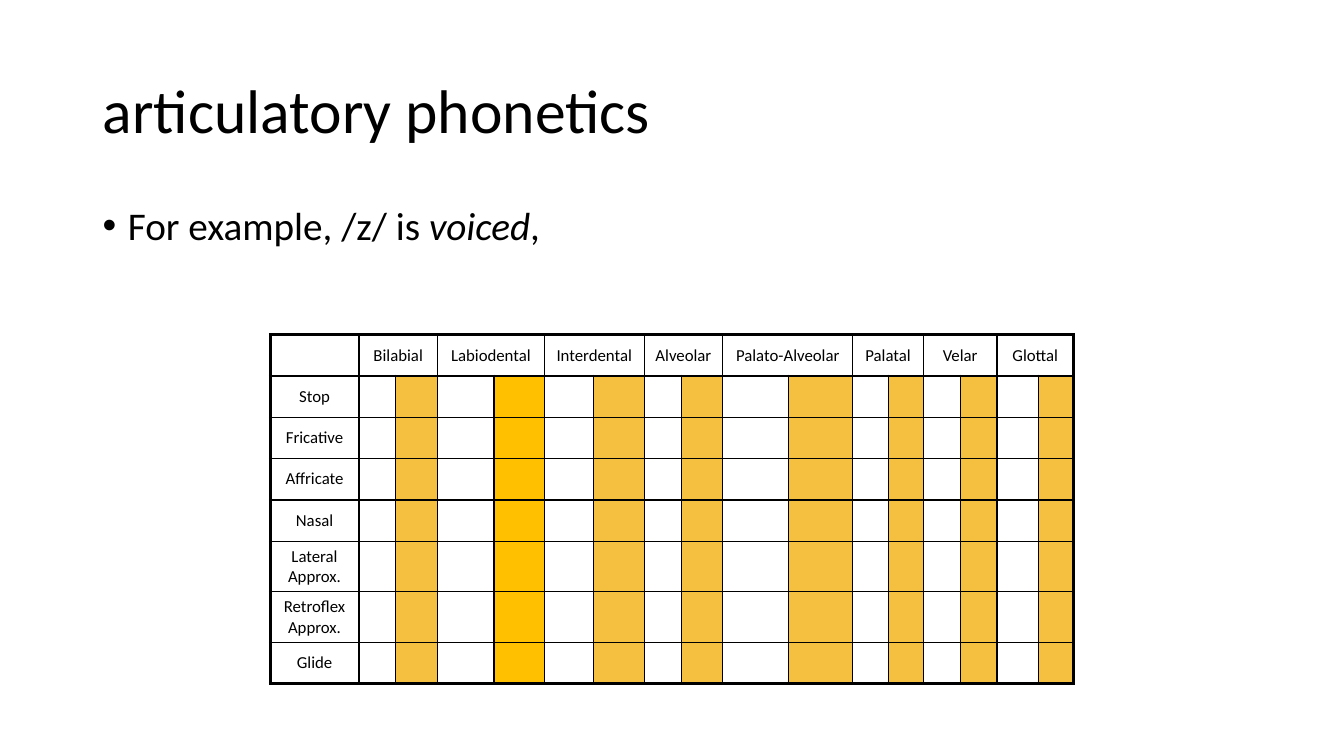
from pptx import Presentation
from pptx.dml.color import RGBColor
from pptx.enum.text import MSO_ANCHOR, PP_ALIGN
from pptx.oxml import parse_xml
from pptx.oxml.ns import nsdecls
from pptx.util import Inches, Pt

FONT = "Calibri"
BLACK, WHITE, AMBER, GOLD = "000000", "FFFFFF", "F5C040", "FFC000"
THIN, THICK = 1, 2.25
PLACES = ["Bilabial", "Labiodental", "Interdental", "Alveolar",
          "Palato-Alveolar", "Palatal", "Velar", "Glottal"]
MANNERS = ["Stop", "Fricative", "Affricate", "Nasal",
           "Lateral Approx.", "Retroflex Approx.", "Glide"]
WIDTHS = [0.88, 0.36, 0.42, 0.56, 0.5, 0.49, 0.5, 0.37, 0.41,
          0.65, 0.64, 0.35, 0.35, 0.37, 0.36, 0.41, 0.35]
ROW = 0.41


def color(code):
    return RGBColor.from_string(code)


def add_run(para, text, size, italic=False):
    run = para.add_run()
    run.text = text
    run.font.name = FONT
    run.font.size = Pt(size)
    run.font.italic = italic
    run.font.color.rgb = color(BLACK)


def add_title(slide, left, top, width, height):
    title = slide.shapes.title
    title.left, title.top = Inches(left), Inches(top)
    title.width, title.height = Inches(width), Inches(height)
    title.text_frame.vertical_anchor = MSO_ANCHOR.MIDDLE
    para = title.text_frame.paragraphs[0]
    para.alignment = PP_ALIGN.LEFT
    para.line_spacing = 0.9
    add_run(para, "articulatory phonetics", 44)


def add_body(slide, left, top, width, height):
    box = slide.shapes.add_textbox(Inches(left), Inches(top),
                                   Inches(width), Inches(height))
    box.text_frame.word_wrap = True
    para = box.text_frame.paragraphs[0]
    para.line_spacing = 0.9
    para.space_before = Pt(10)
    props = para._p.get_or_add_pPr()
    props.set("marL", str(Inches(0.25)))
    props.set("indent", str(Inches(-0.25)))
    props.append(parse_xml(f'<a:buFont {nsdecls("a")} typeface="Arial"/>'))
    props.append(parse_xml(f'<a:buChar {nsdecls("a")} char="•"/>'))
    add_run(para, "For example, /z/ is ", 28)
    add_run(para, "voiced", 28, italic=True)
    add_run(para, ",", 28)


def set_edges(cell, left, right, top, bottom):
    """Draw the four cell borders with the given widths in points."""
    props = cell._tc.get_or_add_tcPr()
    for tag, width in zip(("lnL", "lnR", "lnT", "lnB"),
                          (left, right, top, bottom)):
        props.append(parse_xml(
            f'<a:{tag} {nsdecls("a")} w="{Pt(width)}"><a:solidFill>'
            f'<a:srgbClr val="{BLACK}"/></a:solidFill></a:{tag}>'))


def set_label(cell, text):
    cell.vertical_anchor = MSO_ANCHOR.MIDDLE
    para = cell.text_frame.paragraphs[0]
    para.alignment = PP_ALIGN.CENTER
    add_run(para, text, 12)


def weight(edge, last):
    """The frame and the line after the labels are thick."""
    return THICK if edge in (0, 1, last) else THIN


def shade(row, col):
    """Each place has a white voiceless and a tinted voiced column."""
    if row == 0 or col == 0 or col % 2:
        return WHITE
    return GOLD if col == 4 else AMBER


def add_grid(slide, left, top):
    rows, cols = len(MANNERS) + 1, len(WIDTHS)
    frame = slide.shapes.add_table(rows, cols, Inches(left), Inches(top),
                                   Inches(sum(WIDTHS)), Inches(ROW * rows))
    table = frame.table
    table.first_row = table.horz_banding = False
    for col, width in zip(table.columns, WIDTHS):
        col.width = Inches(width)
    for r, row in enumerate(table.rows):
        row.height = Inches(ROW)
        for c, cell in enumerate(row.cells):
            start, end = c, c + 1
            if r == 0 and c > 0:
                start = c - (c + 1) % 2
                end = start + 2
            set_edges(cell, weight(start, cols), weight(end, cols),
                      weight(r, rows), weight(r + 1, rows))
            cell.fill.solid()
            cell.fill.fore_color.rgb = color(shade(r, c))
    for i, place in enumerate(PLACES):
        cell = table.cell(0, 2 * i + 1)
        cell.merge(table.cell(0, 2 * i + 2))
        set_label(cell, place)
    for r, manner in enumerate(MANNERS, 1):
        set_label(table.cell(r, 0), manner)


def main():
    deck = Presentation()
    deck.slide_width, deck.slide_height = Inches(13.33), Inches(7.5)
    slide = deck.slides.add_slide(deck.slide_layouts[5])
    add_title(slide, 0.92, 0.4, 11.5, 1.45)
    add_body(slide, 0.92, 2, 11.5, 4.76)
    add_grid(slide, 2.68, 3.32)
    deck.save("out.pptx")


if __name__ == "__main__":
    main()
